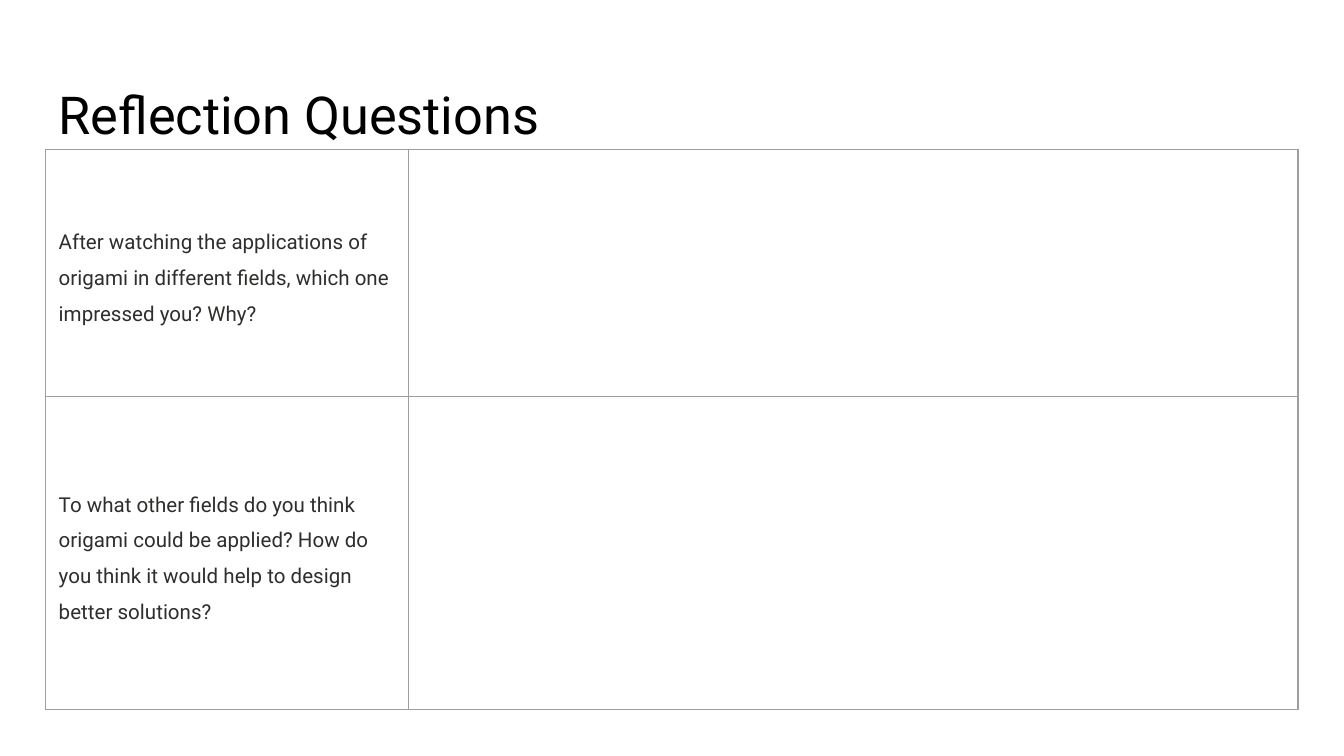
from lxml.etree import SubElement
from pptx import Presentation
from pptx.dml.color import RGBColor
from pptx.enum.text import MSO_ANCHOR, PP_ALIGN
from pptx.oxml.ns import qn
from pptx.util import Cm, Pt

FONT = "Roboto"
LEFT = 0.86
PAD = 0.25
COLS = [6.86, 16.81]
ROWS = [4.67, 5.92]
ASKS = [
    "After watching the applications of origami in different fields, which one impressed you? Why?",
    "To what other fields do you think origami could be applied? How do you think it would help to design better solutions?",
]


def color(code):
    return RGBColor.from_string(code)


def add_run(para, text, size, code):
    run = para.add_run()
    run.text = text
    run.font.name = FONT
    run.font.size = Pt(size)
    run.font.color.rgb = color(code)


def set_title(slide, text):
    title = slide.shapes.title
    title.left, title.top = Cm(LEFT), Cm(1.24)
    title.width, title.height = Cm(sum(COLS)), Cm(1.6)
    frame = title.text_frame
    frame.word_wrap = True
    frame.vertical_anchor = MSO_ANCHOR.TOP
    frame.margin_left = frame.margin_right = Cm(PAD)
    frame.margin_top, frame.margin_bottom = Cm(0.31), Cm(0)
    para = frame.paragraphs[0]
    para.alignment = PP_ALIGN.LEFT
    add_run(para, text, 28, "000000")


def set_edges(cell, code, width):
    props = cell._tc.get_or_add_tcPr()
    for spot, side in enumerate(("lnL", "lnR", "lnT", "lnB")):
        line = props.makeelement(qn(f"a:{side}"), {"w": str(Pt(width))})
        fill = SubElement(line, qn("a:solidFill"))
        SubElement(fill, qn("a:srgbClr"), val=code)
        props.insert(spot, line)


def set_cell(cell):
    cell.fill.solid()
    cell.fill.fore_color.rgb = color("FFFFFF")
    cell.vertical_anchor = MSO_ANCHOR.MIDDLE
    cell.margin_left = cell.margin_right = Cm(PAD)
    cell.margin_top = cell.margin_bottom = Cm(PAD)
    set_edges(cell, "9E9E9E", 0.75)


def add_grid(slide, asks):
    frame = slide.shapes.add_table(
        len(ROWS), len(COLS), Cm(LEFT), Cm(2.82), Cm(sum(COLS)), Cm(sum(ROWS))
    )
    table = frame.table
    table.first_row = table.horz_banding = False
    for col, width in zip(table.columns, COLS):
        col.width = Cm(width)
    for row, height, ask in zip(table.rows, ROWS, asks):
        row.height = Cm(height)
        for cell in row.cells:
            set_cell(cell)
        para = row.cells[0].text_frame.paragraphs[0]
        para.line_spacing = 1.5
        add_run(para, ask, 11, "2F2E2C")


def main():
    deck = Presentation()
    deck.slide_width, deck.slide_height = Cm(25.4), Cm(14.29)
    slide = deck.slides.add_slide(deck.slide_layouts[5])
    set_title(slide, "Reflection Questions")
    add_grid(slide, ASKS)
    deck.save("out.pptx")


if __name__ == "__main__":
    main()
